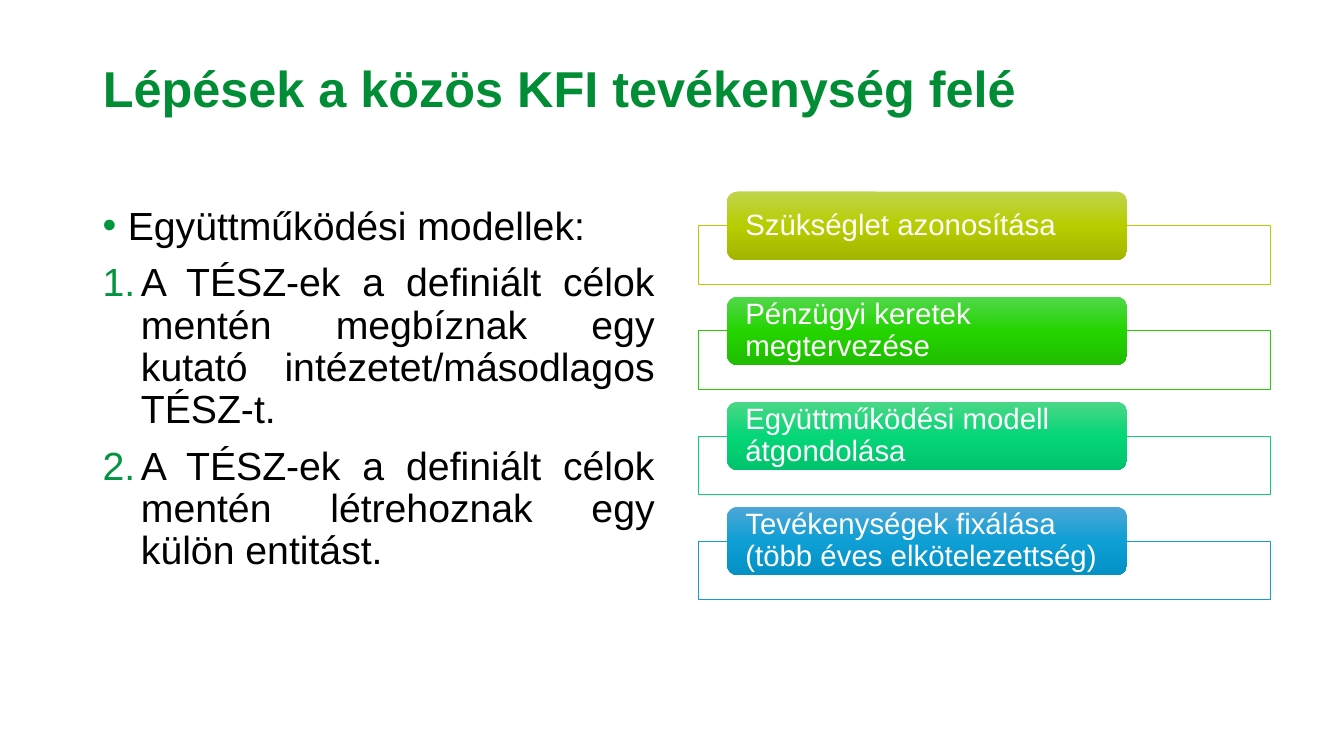
from dataclasses import dataclass

from lxml import etree
from pptx import Presentation
from pptx.dml.color import RGBColor
from pptx.enum import shapes, text
from pptx.oxml import ns
from pptx.util import Inches, Pt

TITLE = "Lépések a közös KFI tevékenység felé"
MODELS = [
    ("buChar", {"char": "•"}, 0.25, "Együttműködési modellek:"),
    ("buAutoNum", {"type": "arabicPeriod"}, 0.38,
     "A TÉSZ-ek a definiált célok mentén megbíznak egy kutató "
     "intézetet/másodlagos TÉSZ-t."),
    ("buAutoNum", {"type": "arabicPeriod"}, 0.38,
     "A TÉSZ-ek a definiált célok mentén létrehoznak egy külön entitást."),
]
STEPS = [
    ("Szükséglet azonosítása", "B7CD00", ("C0D44B", "B7CD00", "A3B600")),
    ("Pénzügyi keretek megtervezése", "29CD07", ("52D74B", "24D400", "20BD00")),
    ("Együttműködési modell átgondolása", "0FCD77", ("4CD787", "05D678", "00C36B")),
    ("Tevékenységek fixálása (több éves elkötelezettség)", "179BCC",
     ("4DA7D6", "0E9FD5", "0491C5")),
]


@dataclass(frozen=True)
class Theme:
    font: str = "Arial"
    title: str = "008D36"
    bullet: str = "00953E"
    body: str = "000000"
    light: str = "FFFFFF"
    title_size: int = 36
    body_size: int = 28
    step_size: int = 21


THEME = Theme()
FRAME_LEFT, FRAME_WIDTH, FRAME_HEIGHT = 6.93, 5.67, 0.58
LABEL_LEFT, LABEL_WIDTH, LABEL_HEIGHT = 7.21, 3.97, 0.68
STEP_TOP, STEP_PITCH, FRAME_DROP = 1.9, 1.042, 0.34


def add_xml(parent, tag, **attrs):
    return etree.SubElement(parent, ns.qn(tag), attrs)


def style(p, size, color, bold=False):
    p.line_spacing = 0.9
    p.font.name = THEME.font
    p.font.size = Pt(size)
    p.font.bold = bold
    p.font.color.rgb = RGBColor.from_string(color)


def add_box(slide, kind, left, top, width, height):
    sp = slide.shapes.add_shape(
        kind, Inches(left), Inches(top), Inches(width), Inches(height))
    sp.shadow.inherit = False
    return sp


def fill_gradient(sp, colors):
    sp.fill.gradient()
    sp.fill.gradient_angle = 270
    stops = sp.fill._fill._gradFill.find(ns.qn("a:gsLst"))
    for stop in list(stops):
        stops.remove(stop)
    for i, color in enumerate(colors):
        stop = add_xml(stops, "a:gs", pos=str(i * 50000))
        add_xml(stop, "a:srgbClr", val=color)


def add_title(slide):
    sp = slide.shapes.title
    sp.left, sp.top = Inches(0.92), Inches(0.18)
    sp.width, sp.height = Inches(10.73), Inches(1.45)
    tf = sp.text_frame
    tf.text = TITLE
    tf.vertical_anchor = text.MSO_ANCHOR.MIDDLE
    p = tf.paragraphs[0]
    p.alignment = text.PP_ALIGN.LEFT
    style(p, THEME.title_size, THEME.title, True)


def add_models(slide):
    sp = slide.shapes.add_textbox(
        Inches(0.92), Inches(2), Inches(5.67), Inches(4.76))
    tf = sp.text_frame
    tf.word_wrap = True
    for i, (bullet, attrs, indent, words) in enumerate(MODELS):
        p = tf.add_paragraph() if i else tf.paragraphs[0]
        p.text = words
        p.alignment = text.PP_ALIGN.JUSTIFY
        pPr = p._p.get_or_add_pPr()
        pPr.set("marL", str(Inches(indent)))
        pPr.set("indent", str(-Inches(indent)))
        add_xml(add_xml(pPr, "a:buClr"), "a:srgbClr", val=THEME.bullet)
        add_xml(pPr, "a:buFont", typeface=THEME.font)
        add_xml(pPr, bullet.join(("a:", "")), **attrs)
        p.space_before = Pt(10 if i else 0)
        style(p, THEME.body_size, THEME.body)


def add_step(slide, top, words, line, colors):
    frame = add_box(slide, shapes.MSO_SHAPE.RECTANGLE, FRAME_LEFT,
                    top + FRAME_DROP, FRAME_WIDTH, FRAME_HEIGHT)
    frame.fill.solid()
    frame.fill.fore_color.rgb = RGBColor.from_string(THEME.light)
    frame.line.color.rgb = RGBColor.from_string(line)
    frame.line.width = Pt(0.5)

    label = add_box(slide, shapes.MSO_SHAPE.ROUNDED_RECTANGLE, LABEL_LEFT,
                    top, LABEL_WIDTH, LABEL_HEIGHT)
    fill_gradient(label, colors)
    label.line.fill.background()
    tf = label.text_frame
    tf.word_wrap = True
    tf.vertical_anchor = text.MSO_ANCHOR.MIDDLE
    tf.margin_left = tf.margin_right = Inches(0.15)
    tf.margin_top = tf.margin_bottom = 0
    tf.text = words
    p = tf.paragraphs[0]
    p.alignment = text.PP_ALIGN.LEFT
    style(p, THEME.step_size, THEME.light)


def main():
    prs = Presentation()
    prs.slide_width, prs.slide_height = Inches(13.33), Inches(7.5)
    slide = prs.slides.add_slide(prs.slide_layouts[5])
    add_title(slide)
    add_models(slide)
    for i, step in enumerate(STEPS):
        add_step(slide, STEP_TOP + i * STEP_PITCH, *step)
    prs.save("out.pptx")


if __name__ == "__main__":
    main()
